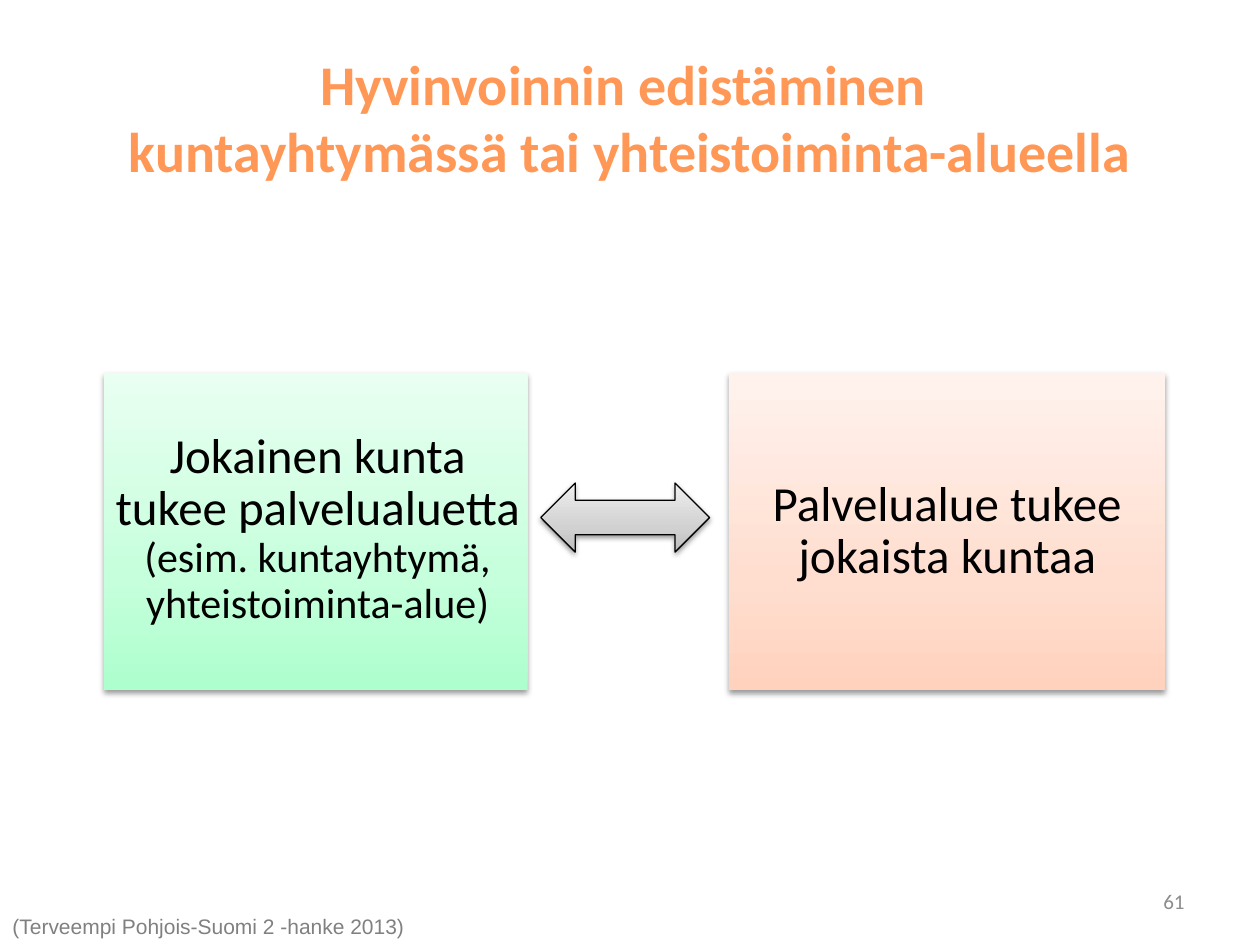
from copy import deepcopy

from lxml import etree
from pptx import Presentation
from pptx.dml.color import RGBColor
from pptx.enum.shapes import MSO_SHAPE
from pptx.enum.text import MSO_ANCHOR, PP_ALIGN
from pptx.oxml.ns import qn
from pptx.util import Pt

RECTANGLE, DOUBLE_ARROW = MSO_SHAPE.RECTANGLE, MSO_SHAPE.LEFT_RIGHT_ARROW
MIDDLE, TOP = MSO_ANCHOR.MIDDLE, MSO_ANCHOR.TOP
LEFT, CENTER, RIGHT = PP_ALIGN.LEFT, PP_ALIGN.CENTER, PP_ALIGN.RIGHT

COLORS = {
    "title": "FF9856",
    "text": "000000",
    "number": "8C8C8C",
    "source": "808080",
    "outline": "000000",
    "shadow": "000000",
}
GRADIENTS = {
    "green": ("ADFFCD", "C5FFDB", "E9FFF1"),
    "orange": ("FFD2BD", "FFDED0", "FFF2ED"),
    "grey": ("BDBDBD", "D1D1D1", "EEEEEE"),
}
STOP_POSITIONS = (0, 0.35, 1)
BOX_TOP, BOX_HEIGHT = 213, 181.5


def rgb(name):
    return RGBColor.from_string(COLORS[name])


def style_font(font, size, color, name="Calibri", bold=False):
    font.name, font.size, font.bold = name, Pt(size), bold
    font.color.rgb = rgb(color)


def fill_gradient(shape, hexes):
    """Fill from bottom to top with three colour stops."""
    fill = shape.fill
    fill.gradient()
    fill.gradient_angle = 90
    stops = shape._element.spPr.find(qn("a:gradFill")).find(qn("a:gsLst"))
    stops.append(deepcopy(stops[-1]))
    for stop, position, color in zip(fill.gradient_stops, STOP_POSITIONS, hexes):
        stop.position = position
        stop.color.rgb = RGBColor.from_string(color)


def add_soft_shadow(shape):
    shape.shadow.inherit = False
    effects = shape._element.spPr.find(qn("a:effectLst"))
    shadow = etree.SubElement(
        effects, qn("a:outerShdw"), blurRad=str(Pt(3.1)), dist=str(Pt(1.6)),
        dir="5400000", rotWithShape="0")
    color = etree.SubElement(shadow, qn("a:srgbClr"), val=COLORS["shadow"])
    etree.SubElement(color, qn("a:alpha"), val="38000")


def add_gradient_shape(slide, kind, box, gradient):
    shape = slide.shapes.add_shape(kind, *map(Pt, box))
    fill_gradient(shape, GRADIENTS[gradient])
    shape.line.fill.background()
    add_soft_shadow(shape)
    return shape


def add_party(slide, left, width, gradient, parts, right_inset=5, bottom_inset=5):
    """Add a box whose parts are (text, size) runs of one paragraph."""
    party = add_gradient_shape(
        slide, RECTANGLE, (left, BOX_TOP, width, BOX_HEIGHT), gradient)
    frame = party.text_frame
    frame.word_wrap = True
    frame.vertical_anchor = MIDDLE
    frame.margin_left = frame.margin_top = Pt(5)
    frame.margin_right, frame.margin_bottom = Pt(right_inset), Pt(bottom_inset)
    paragraph = frame.paragraphs[0]
    paragraph.alignment = CENTER
    paragraph.line_spacing = 0.9
    for text, size in parts:
        run = paragraph.add_run()
        run.text = text
        style_font(run.font, size, "text")


def add_arrow(slide):
    arrow = add_gradient_shape(slide, DOUBLE_ARROW, (309, 276, 96.5, 39.5), "grey")
    arrow.line.color.rgb = rgb("outline")
    arrow.line.width = Pt(0.75)


def add_small_text(slide, box, text, color, font_name, align, anchor):
    frame = slide.shapes.add_textbox(*map(Pt, box)).text_frame
    frame.word_wrap = True
    frame.vertical_anchor = anchor
    paragraph = frame.paragraphs[0]
    paragraph.text = text
    paragraph.alignment = align
    style_font(paragraph.font, 12, color, font_name)


def set_title(slide, text):
    title = slide.shapes.title
    title.left, title.top, title.width, title.height = map(Pt, (36, 21.6, 648, 90))
    title.text_frame.vertical_anchor = MIDDLE
    paragraph = title.text_frame.paragraphs[0]
    paragraph.text = text
    paragraph.alignment = CENTER
    style_font(paragraph.font, 32, "title", bold=True)


def main():
    deck = Presentation()
    deck.slide_width, deck.slide_height = Pt(720), Pt(540)
    slide = deck.slides.add_slide(deck.slide_layouts[5])
    set_title(slide, "Hyvinvoinnin edistäminen \vkuntayhtymässä tai yhteistoiminta-alueella")
    add_party(slide, 59.5, 242, "green",
              [("Jokainen kunta tukee palvelualuetta ", 28),
               ("(esim. kuntayhtymä, yhteistoiminta-alue)", 24)],
              right_inset=3, bottom_inset=8)
    add_party(slide, 416.5, 249.5, "orange",
              [("Palvelualue tukee jokaista kuntaa", 28)])
    add_arrow(slide)
    add_small_text(slide, (516, 500.5, 168, 28.75), "61",
                   "number", "Calibri", RIGHT, MIDDLE)
    add_small_text(slide, (0, 518.4, 394, 21.6), "(Terveempi Pohjois-Suomi 2 -hanke 2013)",
                   "source", "Arial", LEFT, TOP)
    deck.save("out.pptx")


if __name__ == "__main__":
    main()
